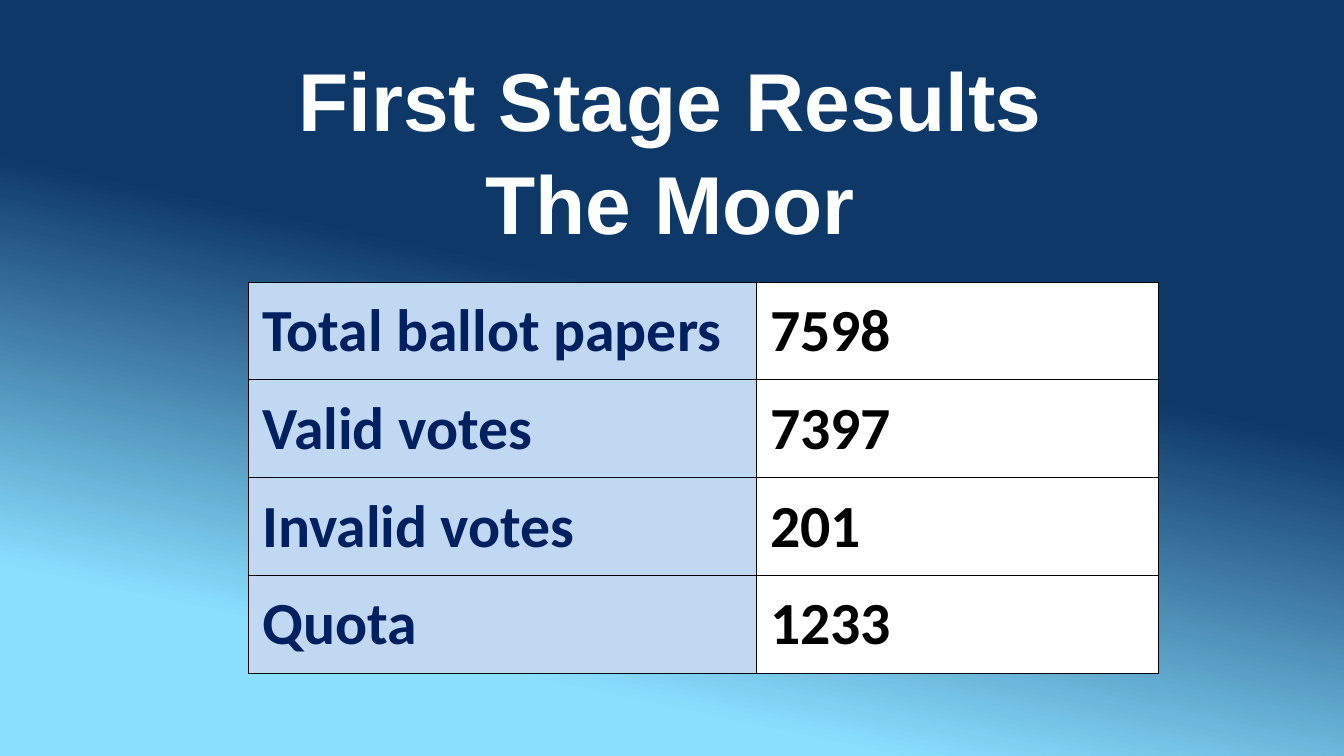
from pptx import Presentation
from pptx.dml.color import RGBColor
from pptx.enum.text import MSO_ANCHOR, MSO_AUTO_SIZE, PP_ALIGN
from pptx.oxml import parse_xml
from pptx.oxml.ns import nsdecls
from pptx.util import Cm, Pt

CENTER, LEFT = PP_ALIGN.CENTER, PP_ALIGN.LEFT
BOTTOM, MIDDLE = MSO_ANCHOR.BOTTOM, MSO_ANCHOR.MIDDLE
NO_FIT = MSO_AUTO_SIZE.NONE

TITLE = ["First Stage Results", "The Moor"]
RESULTS = [
    ("Total ballot papers", "7598"),
    ("Valid votes", "7397"),
    ("Invalid votes", "201"),
    ("Quota", "1233"),
]
COLUMNS = [
    {"width": 9.6, "fill": "C1D8F2", "color": "002060"},
    {"width": 7.59, "fill": "FFFFFF", "color": "000000"},
]
BACKGROUND = [(0.42, "0D3868"), (0.82, "8ADFFF")]
ROW_HEIGHT = 1.85
BORDER_COLOR, BORDER_WIDTH = "000000", 0.5


def rgb(value):
    return RGBColor.from_string(value)


def write(frame, lines, *, size, font, color, align=LEFT, anchor=MIDDLE, spacing=1.0):
    frame.vertical_anchor = anchor
    for index, line in enumerate(lines):
        para = frame.paragraphs[0] if index == 0 else frame.add_paragraph()
        para.alignment = align
        para.line_spacing = spacing
        span = para.add_run()
        span.text = line
        span.font.size = Pt(size)
        span.font.name = font
        span.font.bold = True
        span.font.color.rgb = rgb(color)


def add_borders(cell):
    properties = cell._tc.get_or_add_tcPr()
    for index, side in enumerate(("lnL", "lnR", "lnT", "lnB")):
        properties.insert(index, parse_xml(
            f'<a:{side} {nsdecls("a")} w="{Pt(BORDER_WIDTH)}"><a:solidFill>'
            f'<a:srgbClr val="{BORDER_COLOR}"/></a:solidFill></a:{side}>'))


def add_background(page):
    fill = page.background.fill
    fill.gradient()
    fill.gradient_angle = 258
    for stop, (position, color) in zip(fill.gradient_stops, BACKGROUND):
        stop.position = position
        stop.color.rgb = rgb(color)


def add_title(page):
    box = page.shapes.title
    box.left, box.top, box.width, box.height = Cm(0), Cm(0.94), Cm(25.4), Cm(3.81)
    frame = box.text_frame
    frame.auto_size = NO_FIT
    frame.word_wrap = True
    frame.margin_left = frame.margin_top = frame.margin_bottom = 0
    frame.margin_right = Cm(0.05)
    write(frame, TITLE, size=44, font="Arial", color="FFFFFF",
          align=CENTER, anchor=BOTTOM, spacing=1.05)


def add_results(page):
    width = sum(column["width"] for column in COLUMNS)
    table = page.shapes.add_table(
        len(RESULTS), len(COLUMNS), Cm(4.7), Cm(5.33),
        Cm(width), Cm(ROW_HEIGHT * len(RESULTS))).table
    table.first_row = table.horz_banding = False
    for column, style in zip(table.columns, COLUMNS):
        column.width = Cm(style["width"])
    for row, values in zip(table.rows, RESULTS):
        row.height = Cm(ROW_HEIGHT)
        for cell, value, style in zip(row.cells, values, COLUMNS):
            cell.fill.solid()
            cell.fill.fore_color.rgb = rgb(style["fill"])
            cell.vertical_anchor = MIDDLE
            write(cell.text_frame, [value], size=32, font="Calibri", color=style["color"])
            add_borders(cell)


def main():
    deck = Presentation()
    deck.slide_width, deck.slide_height = Cm(25.4), Cm(14.29)
    page = deck.slides.add_slide(deck.slide_layouts.get_by_name("Title Only"))
    add_background(page)
    add_title(page)
    add_results(page)
    deck.save("out.pptx")


if __name__ == "__main__":
    main()
